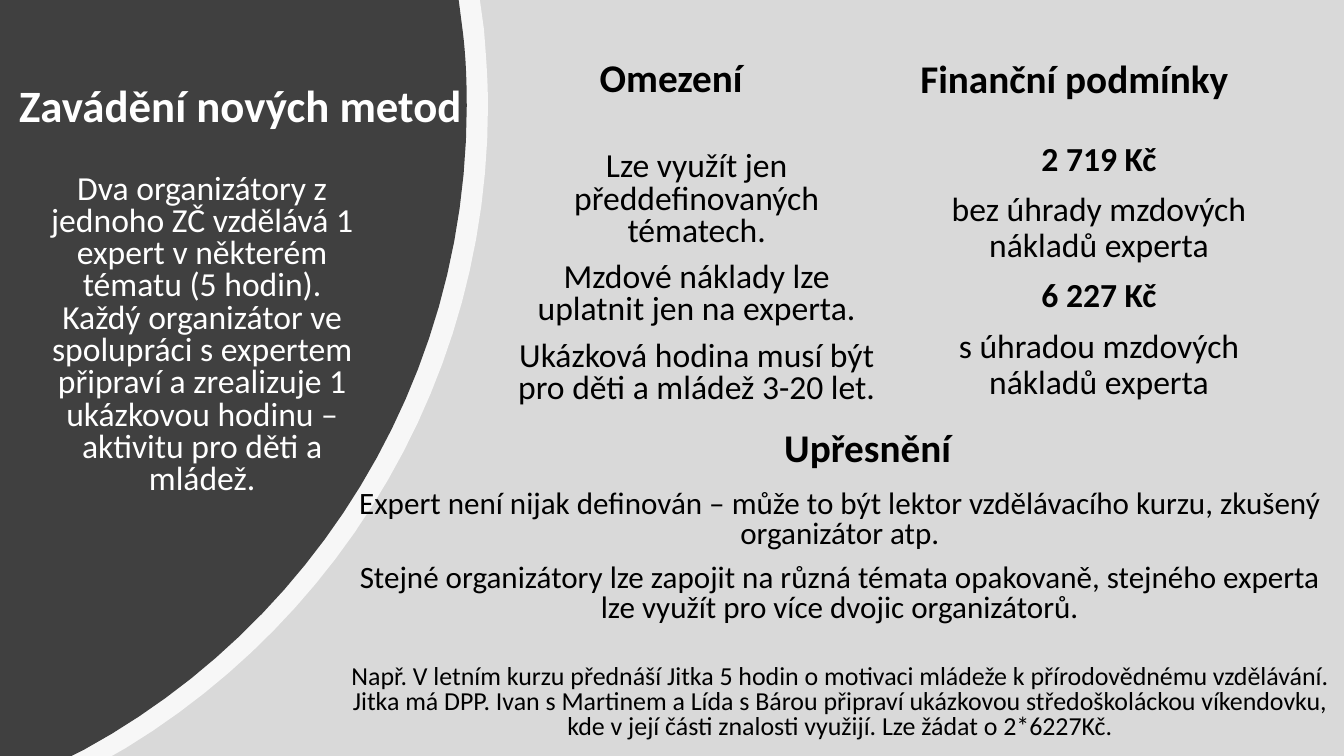
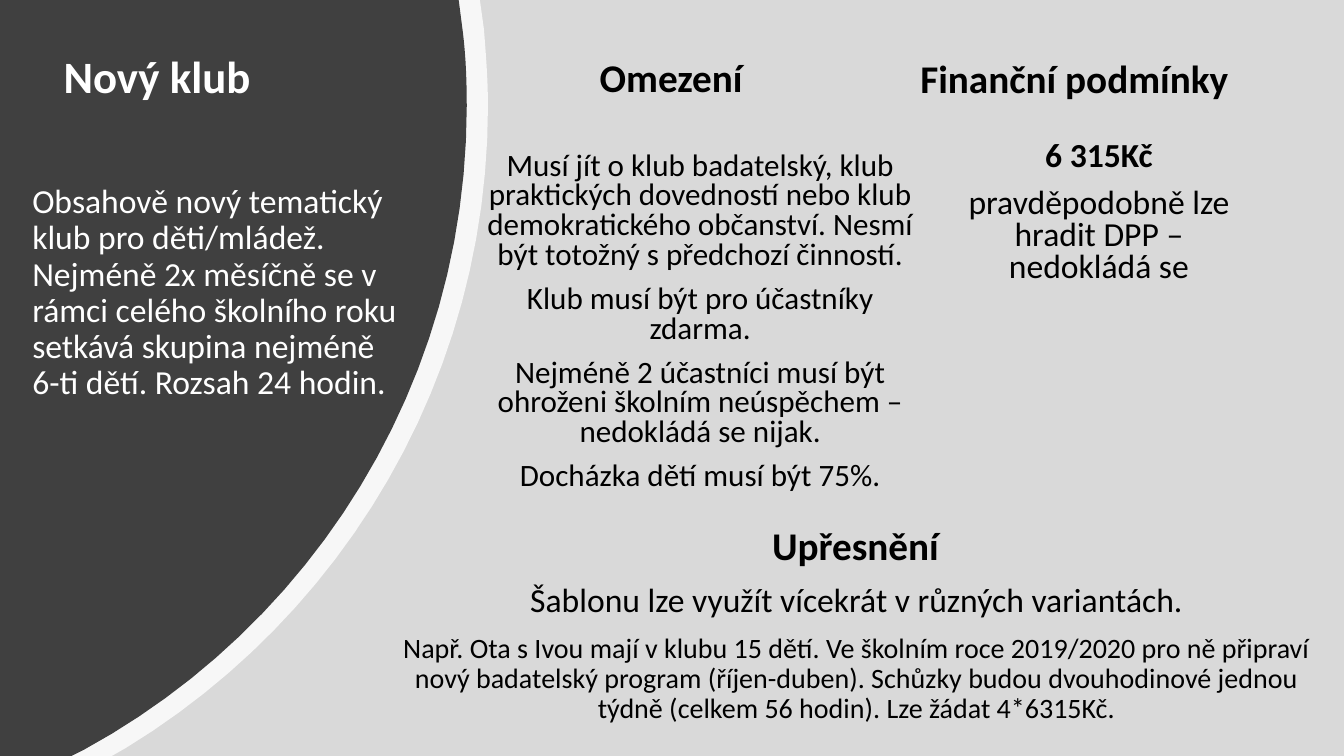
from lxml import etree
from pptx import Presentation
from pptx.dml.color import RGBColor
from pptx.enum.shapes import MSO_SHAPE
from pptx.enum.text import MSO_ANCHOR, MSO_AUTO_SIZE, PP_ALIGN
from pptx.oxml.ns import qn
from pptx.util import Inches, Pt

LEFT, CENTER = PP_ALIGN.LEFT, PP_ALIGN.CENTER
TOP = MSO_ANCHOR.TOP
NO_FIT, GROW = MSO_AUTO_SIZE.NONE, MSO_AUTO_SIZE.SHAPE_TO_FIT_TEXT
RECTANGLE = MSO_SHAPE.RECTANGLE

# Shared design
WIDTH, HEIGHT = 13.33, 7.5
FONT = "Calibri"
COLORS = {"ground": "D9D9D9", "panel": "404040", "rim": "FFFFFF",
          "light": "FFFFFF", "dark": "000000"}
RIM_OPACITY = 80
CURVE_STEPS = 24
# Right edge of each panel: straight start, two Bézier curves, bottom corner
RIM_EDGE = [(4.76, 0), (4.8, 0.29),
            [(4.82, 0.54), (4.84, 0.8), (4.84, 1.05)],
            [(4.84, 3.75), (3.4, 6.11), (1.25, 7.42)], (1.11, HEIGHT)]
PANEL_EDGE = [(4.55, 0), (4.59, 0.31),
              [(4.62, 0.55), (4.63, 0.8), (4.63, 1.05)],
              [(4.63, 3.81), (3.09, 6.21), (0.83, 7.44)], (0.71, HEIGHT)]


def rgb(name):
    return RGBColor.from_string(COLORS[name])


def paint(shape, color):
    shape.shadow.inherit = False
    shape.fill.solid()
    shape.fill.fore_color.rgb = rgb(color)
    shape.line.fill.background()


def curve_points(start, controls):
    """Points along a cubic Bézier curve."""
    nodes = [start, *controls]
    points = []
    for step in range(1, CURVE_STEPS + 1):
        t = step / CURVE_STEPS
        weights = ((1 - t) ** 3, 3 * t * (1 - t) ** 2,
                   3 * t ** 2 * (1 - t), t ** 3)
        points.append(tuple(sum(w * node[axis] for w, node in zip(weights, nodes))
                            for axis in (0, 1)))
    return points


def add_panel(slide, edge, color):
    outline = [(0, 0)]
    for part in edge:
        outline += curve_points(outline[-1], part) if isinstance(part, list) else [part]
    outline.append((0, HEIGHT))
    points = [(Inches(x), Inches(y)) for x, y in outline]
    builder = slide.shapes.build_freeform(*points[0])
    builder.add_line_segments(points[1:], close=True)
    panel = builder.convert_to_shape()
    paint(panel, color)
    return panel


def add_backdrop(slide):
    ground = slide.shapes.add_shape(RECTANGLE, 0, 0, Inches(WIDTH), Inches(HEIGHT))
    paint(ground, "ground")
    rim = add_panel(slide, RIM_EDGE, "rim")
    rim_color = rim.element.spPr.find(qn("a:solidFill"))[0]
    etree.SubElement(rim_color, qn("a:alpha"), val=str(RIM_OPACITY * 1000))
    add_panel(slide, PANEL_EDGE, "panel")


def write(frame, items, size, color="dark", spacing=0.9, before=10, align=CENTER):
    """Fill a frame; an item is a text or a (text, overrides) pair."""
    settings = {"word_wrap": True, "auto_size": NO_FIT, "vertical_anchor": TOP}
    for key, value in settings.items():
        setattr(frame, key, value)
    for index, item in enumerate(items):
        text, overrides = item if isinstance(item, tuple) else (item, {})
        paragraph = frame.add_paragraph() if index else frame.paragraphs[0]
        paragraph.text = text
        layout = {"alignment": align, "line_spacing": spacing,
                  "space_before": Pt(overrides.get("before", before))}
        for key, value in layout.items():
            setattr(paragraph, key, value)
        style = {"name": FONT, "size": Pt(overrides.get("size", size)),
                 "bold": overrides.get("bold", False)}
        for run in paragraph.runs:
            for key, value in style.items():
                setattr(run.font, key, value)
            run.font.color.rgb = rgb(color)


def place(shape, box):
    for key, value in zip(("left", "top", "width", "height"), box):
        setattr(shape, key, Inches(value))


def fill_placeholder(slide, index, box, items, size, **options):
    holder = slide.placeholders[index]
    slide.shapes.element.append(holder.element)  # bring in front of the backdrop
    place(holder, box)
    write(holder.text_frame, items, size, color="light", **options)
    return holder


def add_title(slide, text, box):
    fill_placeholder(slide, 0, box, [(text, {"bold": True})], 32, before=0, align=LEFT)


def add_description(slide, text, box, **options):
    body = fill_placeholder(slide, 1, box, [text], 24, **options)
    for paragraph in body.text_frame.paragraphs:
        properties = paragraph._p.get_or_add_pPr()
        properties.set("marL", "0")
        properties.set("indent", "0")
        etree.SubElement(properties, qn("a:buNone"))


def add_text(slide, box, items, size, **options):
    text_box = slide.shapes.add_textbox(*map(Inches, box))
    write(text_box.text_frame, items, size, **options)
    return text_box


def add_heading(slide, text, left, top, width):
    heading = add_text(slide, (left, top, width, 0.57), [(text, {"bold": True})],
                       28, spacing=1.0, before=0, align=LEFT)
    heading.text_frame.word_wrap = False
    heading.text_frame.auto_size = GROW


def add_activity(deck, title, description, limits, finances, details):
    """One funded activity; each part is a dict of its box, text and format."""
    slide = deck.slides.add_slide(deck.slide_layouts[1])
    add_backdrop(slide)
    add_title(slide, **title)
    add_description(slide, **description)
    add_heading(slide, "Omezení", 5.85, 0.48, 1.63)
    add_heading(slide, "Finanční podmínky", 9.03, 0.49, 3.29)
    add_text(slide, **limits)
    add_text(slide, size=24, **finances)
    heading_left, heading_top = details.pop("heading_at")
    add_heading(slide, "Upřesnění", heading_left, heading_top, 1.87)
    add_text(slide, **details)


def main():
    deck = Presentation()
    deck.slide_width, deck.slide_height = Inches(WIDTH), Inches(HEIGHT)
    amount = {"bold": True}

    # New methods
    add_activity(
        deck,
        title={"text": "Zavádění nových metod", "box": (0.09, 0.78, 4.6, 1.79)},
        description={
            "box": (0.34, 1.68, 3.33, 3.42), "spacing": 0.8,
            "text": "Dva organizátory z jednoho ZČ vzdělává 1 expert v některém "
                    "tématu (5 hodin). Každý organizátor ve spolupráci s expertem "
                    "připraví a zrealizuje 1 ukázkovou hodinu – aktivitu pro děti "
                    "a mládež."},
        limits={
            "box": (4.96, 1.46, 3.9, 2.82), "size": 24, "spacing": 0.8,
            "items": ["Lze využít jen předdefinovaných tématech.",
                      "Mzdové náklady lze uplatnit jen na experta.",
                      "Ukázková hodina musí být pro děti a mládež 3-20 let."]},
        finances={
            "box": (9.33, 1.36, 3.14, 2.92),
            "items": [("2 719 Kč", amount), "bez úhrady mzdových nákladů experta",
                      ("6 227 Kč", amount), "s úhradou mzdových nákladů experta"]},
        details={
            "heading_at": (7.68, 4.15),
            "box": (3.33, 4.82, 10, 2.63), "size": 22.2, "spacing": 0.8,
            "items": ["Expert není nijak definován – může to být lektor "
                      "vzdělávacího kurzu, zkušený organizátor atp.",
                      "Stejné organizátory lze zapojit na různá témata opakovaně, "
                      "stejného experta lze využít pro více dvojic organizátorů.",
                      ("Např. V letním kurzu přednáší Jitka 5 hodin o motivaci mládeže "
                       "k přírodovědnému vzdělávání. Jitka má DPP. Ivan s Martinem "
                       "a Lída s Bárou připraví ukázkovou středoškoláckou víkendovku, "
                       "kde v její části znalosti využijí. Lze žádat o 2*6227Kč.",
                       {"size": 18.5, "before": 29.5})]})

    # New club
    add_activity(
        deck,
        title={"text": "Nový klub", "box": (0.53, 0.49, 2.81, 1.79)},
        description={
            "box": (0.22, 1.78, 3.94, 2.61), "align": LEFT,
            "text": "Obsahově nový tematický klub pro děti/mládež. Nejméně 2x "
                    "měsíčně se v rámci celého školního roku setkává skupina "
                    "nejméně\v6-ti dětí. Rozsah 24 hodin."},
        limits={
            "box": (4.63, 1.46, 4.63, 3.72), "size": 22.2, "spacing": 0.8,
            "items": ["Musí jít o klub badatelský, klub praktických dovedností nebo "
                      "klub demokratického občanství. Nesmí být totožný s předchozí "
                      "činností.",
                      "Klub musí být pro účastníky zdarma.",
                      "Nejméně 2 účastníci musí být ohroženi školním neúspěchem – "
                      "nedokládá se nijak.",
                      "Docházka dětí musí být 75%."]},
        finances={
            "box": (9.33, 1.36, 3.14, 1.56), "spacing": 0.8,
            "items": [("6 315Kč", amount),
                      "pravděpodobně lze hradit DPP – nedokládá se"]},
        details={
            "heading_at": (7.56, 5.12),
            "box": (3.74, 5.74, 9.51, 1.97), "size": 24,
            "items": ["Šablonu lze využít vícekrát v různých variantách.",
                      ("Např. Ota s Ivou mají v klubu 15 dětí. Ve školním roce "
                       "2019/2020 pro ně připraví nový badatelský program "
                       "(říjen-duben). Schůzky budou dvouhodinové jednou týdně "
                       "(celkem 56 hodin). Lze žádat 4*6315Kč.", {"size": 20})]})

    deck.save("out.pptx")


if __name__ == "__main__":
    main()
